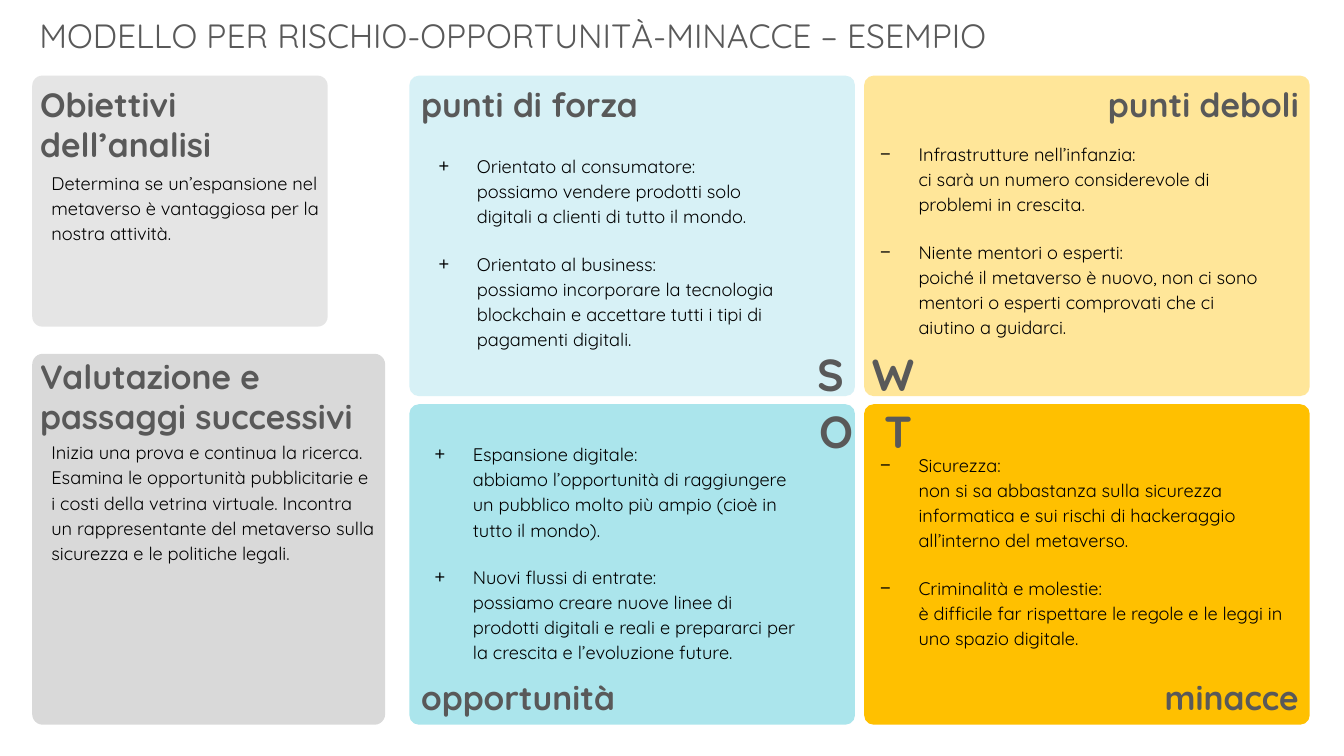
from copy import deepcopy

from pptx import Presentation, util as u
from pptx.dml.color import RGBColor
from pptx.enum import shapes, text
from pptx.oxml import ns, xmlchemy

SCALE = 9144
FONT = "Quicksand"
HUES = {
    "ink": "000000", "head": "595959", "goal": "E5E5E5", "next": "D9D9D9",
    "S": "D7F1F6", "W": "FFE699", "O": "ABE5EC", "T": "FFC000",
}
LISTS = [
    ("+", (420, 121, 373, 256), [
        "Orientato al consumatore:\vpossiamo vendere prodotti solo digitali a clienti di tutto il mondo.",
        "Orientato al business:\vpossiamo incorporare la tecnologia blockchain e accettare tutti i tipi di pagamenti digitali.",
    ]),
    ("−", (858, 122, 409, 231), [
        "Infrastrutture nell’infanzia:\vci sarà un numero considerevole di problemi in crescita.",
        "Niente mentori o esperti:\vpoiché il metaverso è nuovo, non ci sono mentori o esperti comprovati che ci aiutino a guidarci.",
    ]),
    ("+", (416, 409, 387, 277), [
        "Espansione digitale:\vabbiamo l’opportunità di raggiungere un pubblico molto più ampio (cioè in tutto il mondo).",
        "Nuovi flussi di entrate:\vpossiamo creare nuove linee di prodotti digitali e reali e prepararci per la crescita e l’evoluzione future.",
    ]),
    ("−", (858, 407, 428, 277), [
        "Sicurezza:\vnon si sa abbastanza sulla sicurezza informatica e sui rischi di hackeraggio all’interno del metaverso.",
        "Criminalità e molestie:\vè difficile far rispettare le regole e le leggi in uno spazio digitale.",
    ]),
]
HEADS = [
    ("Obiettivi dell’analisi", (30, 78, 278, 131), False),
    ("Valutazione e passaggi successivi", (30, 348, 353, 91), False),
    ("punti di forza", (408, 78, 423, 50), False),
    ("punti deboli", (875, 78, 423, 50), True),
    ("opportunità", (408, 667, 423, 50), False),
    ("minacce", (875, 667, 423, 50), True),
]
MARKS = [
    ("S", (474, 339, 373, 94), True),
    ("W", (855, 339, 382, 94), False),
    ("O", (474, 396, 382, 64), True),
    ("T", (867, 396, 370, 67), False),
]
NOTES = [
    ("Determina se un’espansione nel metaverso è vantaggiosa per la nostra attività.",
     (36, 163, 293, 117)),
    ("Inizia una prova e continua la ricerca. Esamina le opportunità pubblicitarie e i costi della vetrina virtuale. Incontra un rappresentante del metaverso sulla sicurezza e le politiche legali.",
     (36, 430, 345, 241)),
]


def px(n):
    return u.Emu(n * SCALE)


def place(item, box):
    item.left, item.top, item.width, item.height = map(px, box)


def mark(para, sign):
    props = para._p.get_or_add_pPr()
    props.set("marL", str(px(38)))
    props.set("indent", str(-px(38)))
    bullet = xmlchemy.OxmlElement("a:buChar")
    bullet.set("char", sign)
    props.append(bullet)


def write(item, lines, size=13, hue="ink", bold=False, right=False,
          sign=None, lead=1, gap=0, inset=10, mid=False):
    frame = item.text_frame
    frame.word_wrap = True
    frame.auto_size = text.MSO_AUTO_SIZE.NONE
    frame.vertical_anchor = text.MSO_ANCHOR.MIDDLE if mid else text.MSO_ANCHOR.TOP
    frame.margin_left, frame.margin_right = px(inset), px(10)
    frame.margin_top = frame.margin_bottom = px(5)
    for i, line in enumerate(lines):
        para = frame.add_paragraph() if i else frame.paragraphs[0]
        para.text = line
        if sign:
            mark(para, sign)
        para.alignment = text.PP_ALIGN.RIGHT if right else text.PP_ALIGN.LEFT
        para.line_spacing = float(lead)
        para.space_before = u.Pt(gap if i else 0)
        for run in para.runs:
            run.font.name, run.font.size, run.font.bold = FONT, u.Pt(size), bold
            run.font.color.rgb = RGBColor.from_string(HUES[hue])
        for cut in para._p.findall(ns.qn("a:br")):
            cut.insert(0, deepcopy(para.runs[0]._r.rPr))


def card(slide, box, hue, curve):
    item = slide.shapes.add_shape(shapes.MSO_SHAPE.ROUNDED_RECTANGLE, *map(px, box))
    item.adjustments[0] = curve
    item.shadow.inherit = False
    item.fill.solid()
    item.fill.fore_color.rgb = RGBColor.from_string(HUES[hue])
    item.line.fill.background()


def label(slide, words, box, **style):
    write(slide.shapes.add_textbox(*map(px, box)), [words], **style)


def points(slide, slot, sign, box, lines):
    item = slide.placeholders[slot]
    tree = item._element.getparent()
    tree.append(item._element)
    place(item, box)
    write(item, lines, sign=sign, lead=1.15, gap=16, inset=15, mid=True)


def main():
    deck = Presentation()
    deck.slide_width, deck.slide_height = px(1333), px(750)
    slide = deck.slides.add_slide(deck.slide_layouts[4])
    title = slide.shapes.title
    place(title, (29, 10, 1269, 50))
    write(title, ["MODELLO PER RISCHIO-OPPORTUNITÀ-MINACCE – ESEMPIO"], size=24, hue="head")

    card(slide, (32, 75, 293, 249), "goal", 0.04)
    card(slide, (32, 351, 350, 368), "next", 0.03)
    for i, hue in enumerate("SWOT"):
        row, col = divmod(i, 2)
        card(slide, (406 + 451 * col, 75 + 326 * row, 442, 318), hue, 0.03)

    for slot, (sign, box, lines) in enumerate(LISTS, 1):
        points(slide, slot, sign, box, lines)
    for words, box in NOTES:
        label(slide, words, box, lead=1.15, inset=15)
    for size, group in ((24, HEADS), (32, MARKS)):
        for words, box, right in group:
            label(slide, words, box, size=size, hue="head", bold=True, right=right)
    deck.save("out.pptx")


if __name__ == "__main__":
    main()
